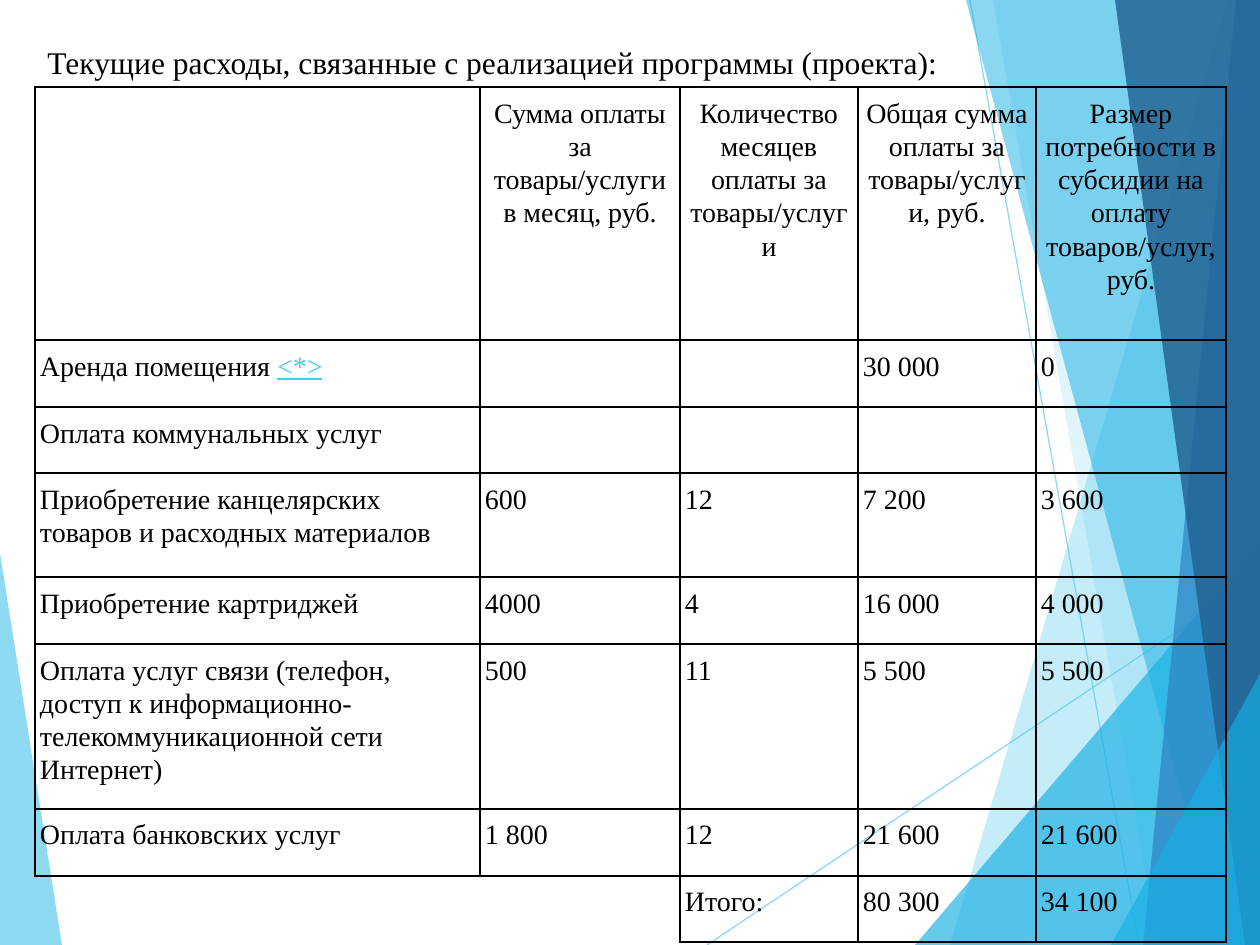
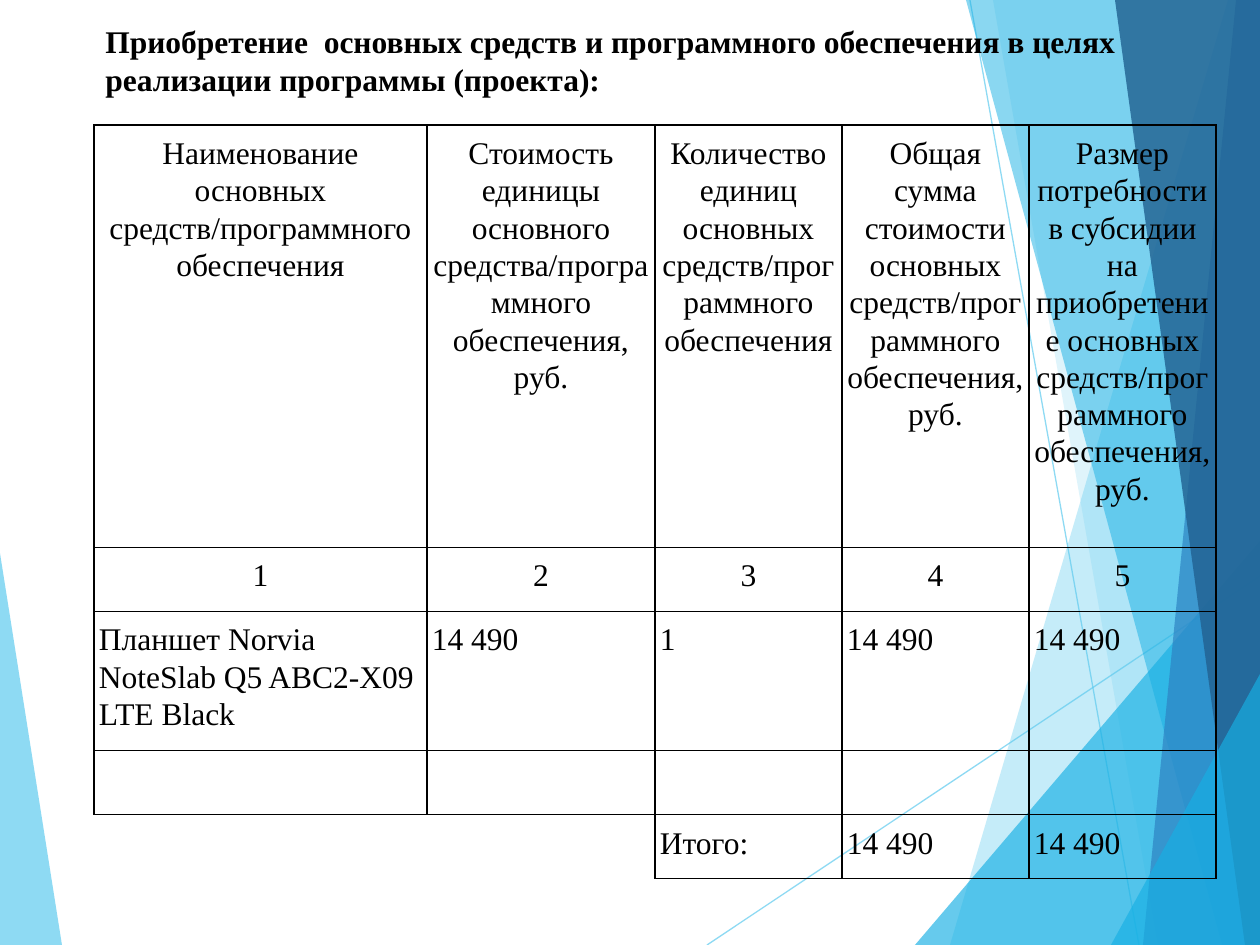
from lxml.etree import SubElement
from pptx import Presentation
from pptx.dml.color import RGBColor
from pptx.enum.shapes import MSO_CONNECTOR as Connector
from pptx.enum.text import MSO_AUTO_SIZE as AutoSize, PP_ALIGN as Align
from pptx.oxml.ns import qn
from pptx.util import Pt

# Scale: 126 px to the inch
PX = 914400 / 126
WIDTH, HEIGHT = 1260, 945

FONT = "Times New Roman"
BLACK = RGBColor(0x00, 0x00, 0x00)
LINK = RGBColor(0x3F, 0xCD, 0xE7)
SKY = RGBColor(0x5F, 0xCB, 0xEF)
CYAN = RGBColor(0x17, 0xB0, 0xE4)
BLUE = RGBColor(0x2E, 0x83, 0xC3)
NAVY = RGBColor(0x22, 0x62, 0x92)

# Facets behind every page: corner points, colour, opacity in percent
LEFT_FACET = ([(0, 553), (62, HEIGHT), (0, HEIGHT)], SKY, 70)
RAYS = [((707, HEIGHT), (WIDTH, 576)), ((970, 0), (1139, HEIGHT))]


def right_facet(top, bottom):
    """Corners of a facet between a slanted edge and the right page edge."""
    return [top, bottom, (WIDTH, HEIGHT), (WIDTH, top[1])]


RIGHT_FACETS = [
    (right_facet((1228, 0), (950, HEIGHT)), SKY, 36),
    (right_facet((993, 0), (1158, HEIGHT)), SKY, 20),
    ([(915, HEIGHT), (WIDTH, 541), (WIDTH, HEIGHT)], CYAN, 66),
    (right_facet((966, 0), (1222, HEIGHT)), CYAN, 50),
    (right_facet((1236, 0), (1143, HEIGHT)), BLUE, 70),
    (right_facet((1115, 0), (1245, HEIGHT)), NAVY, 82),
    ([(1111, HEIGHT), (WIDTH, 674), (WIDTH, HEIGHT)], CYAN, 66),
]

# Running costs
COSTS_COLUMNS = [445, 200, 178, 178, 190]
COSTS_HEIGHTS = [253, 67, 66, 104, 67, 165, 67, 66]
COSTS_ROWS = [
    ["", "Сумма оплаты за товары/услуги в месяц, руб.",
     "Количество месяцев оплаты за товары/услуги",
     "Общая сумма оплаты за товары/услуги, руб.",
     "Размер потребности в субсидии на оплату товаров/услуг, руб."],
    [("Аренда помещения ", "<*>"), "", "", "30 000", "0"],
    ["Оплата коммунальных услуг", "", "", "", ""],
    ["Приобретение канцелярских товаров и расходных материалов",
     "600", "12", "7 200", "3 600"],
    ["Приобретение картриджей", "4000", "4", "16 000", "4 000"],
    ["Оплата услуг связи (телефон, доступ к информационно-"
     "телекоммуникационной сети Интернет)", "500", "11", "5 500", "5 500"],
    ["Оплата банковских услуг", "1 800", "12", "21 600", "21 600"],
    ["", "", "Итого:", "80 300", "34 100"],
]

# Fixed assets and software
ASSETS_COLUMNS = [333, 228, 187, 187, 187]
ASSETS_HEIGHTS = [422, 64, 139, 64, 64]
ASSETS_ROWS = [
    ["Наименование основных средств/программного обеспечения",
     "Стоимость единицы основного средства/программного обеспечения, руб.",
     "Количество единиц основных средств/программного обеспечения",
     "Общая сумма стоимости основных средств/программного обеспечения, руб.",
     "Размер потребности в субсидии на приобретение основных "
     "средств/программного обеспечения, руб."],
    ["1", "2", "3", "4", "5"],
    ["Планшет Norvia NoteSlab Q5 ABC2-X09 LTE Black",
     "14 490", "1", "14 490", "14 490"],
    ["", "", "", "", ""],
    ["", "", "Итого:", "14 490", "14 490"],
]


def px(length):
    return round(length * PX)


def fade(shape, percent):
    for colour in shape.element.iter(qn("a:srgbClr")):
        SubElement(colour, qn("a:alpha")).set("val", str(percent * 1000))


def add_facet(group, points, colour, opacity):
    corners = [(px(x), px(y)) for x, y in points]
    builder = group.shapes.build_freeform(*corners[0])
    builder.add_line_segments(corners[1:], close=True)
    facet = builder.convert_to_shape()
    facet.shadow.inherit = False
    facet.fill.solid()
    facet.fill.fore_color.rgb = colour
    facet.line.fill.background()
    fade(facet, opacity)


def add_ray(group, start, end):
    ray = group.shapes.add_connector(
        Connector.STRAIGHT, *(px(n) for n in start + end))
    ray.line.color.rgb = SKY
    ray.line.width = Pt(0.75)
    fade(ray, 70)
    SubElement(ray.element.spPr, qn("a:effectLst"))


def add_page(deck):
    """Blank page with the shared facets."""
    page = deck.slides.add_slide(deck.slide_layouts[6])
    group = page.shapes.add_group_shape()
    add_facet(group, *LEFT_FACET)
    for ray in RAYS:
        add_ray(group, *ray)
    for facet in RIGHT_FACETS:
        add_facet(group, *facet)
    return page


def add_span(para, text, size, bold=False, colour=BLACK, underline=False):
    span = para.add_run()
    span.text = text
    span.font.name = FONT
    span.font.size = Pt(size)
    span.font.bold = bold
    span.font.underline = underline
    span.font.color.rgb = colour


def add_title(page, left, top, width, height, lines, bold=False):
    box = page.shapes.add_textbox(px(left), px(top), px(width), px(height))
    frame = box.text_frame
    frame.word_wrap = True
    frame.auto_size = AutoSize.SHAPE_TO_FIT_TEXT
    for index, line in enumerate(lines):
        para = frame.add_paragraph() if index else frame.paragraphs[0]
        para.alignment = Align.JUSTIFY
        add_span(para, line, 18, bold)


def set_borders(cell, sides):
    """Black 1 pt on the given sides (letters of LRTB), none elsewhere."""
    properties = cell._tc.get_or_add_tcPr()
    for side in "LRTB":
        edge = SubElement(properties, qn(f"a:ln{side}"), w=str(Pt(1)))
        if side in sides:
            paint = SubElement(edge, qn("a:solidFill"))
            SubElement(paint, qn("a:srgbClr"), val=str(BLACK))
        else:
            SubElement(edge, qn("a:noFill"))


def fill_cell(cell, content, size, centred, sides):
    set_borders(cell, sides)
    cell.fill.background()
    cell.margin_left = cell.margin_right = px(5)
    cell.margin_top = cell.margin_bottom = px(9)
    para = cell.text_frame.paragraphs[0]
    para.line_spacing = 1.07
    para.alignment = Align.CENTER if centred else Align.LEFT
    if not content:
        para.font.size = Pt(size)
        return
    text, mark = content if isinstance(content, tuple) else (content, "")
    add_span(para, text, size)
    if mark:
        add_span(para, mark, size, colour=LINK, underline=True)


def add_grid(page, left, top, columns, heights, rows, size, header_rows):
    """Table whose last row starts with an open cell over two columns."""
    grid = page.shapes.add_table(
        len(rows), len(columns), px(left), px(top),
        px(sum(columns)), px(sum(heights))).table
    grid.first_row = grid.horz_banding = False
    for column, width in zip(grid.columns, columns):
        column.width = px(width)
    last = len(rows) - 1
    for r, (row, height) in enumerate(zip(rows, heights)):
        grid.rows[r].height = px(height)
        for c, content in enumerate(row):
            is_open = r == last and c < 2
            fill_cell(grid.cell(r, c), content, size, r < header_rows,
                      "TR" if is_open else "LRTB")
    grid.cell(last, 0).merge(grid.cell(last, 1))


def main():
    deck = Presentation()
    deck.slide_width, deck.slide_height = px(WIDTH), px(HEIGHT)

    # Running costs
    page = add_page(deck)
    add_title(page, 35, 37, 1150, 50, [
        "Текущие расходы, связанные с реализацией программы (проекта):"])
    add_grid(page, 35, 87, COSTS_COLUMNS, COSTS_HEIGHTS, COSTS_ROWS,
             size=16, header_rows=1)

    # Fixed assets and software
    page = add_page(deck)
    add_title(page, 93, 16, 1133, 89, [
        "Приобретение  основных средств и программного обеспечения в целях",
        "реализации программы (проекта):"], bold=True)
    add_grid(page, 94, 125, ASSETS_COLUMNS, ASSETS_HEIGHTS, ASSETS_ROWS,
             size=18, header_rows=2)

    deck.save("out.pptx")


if __name__ == "__main__":
    main()
